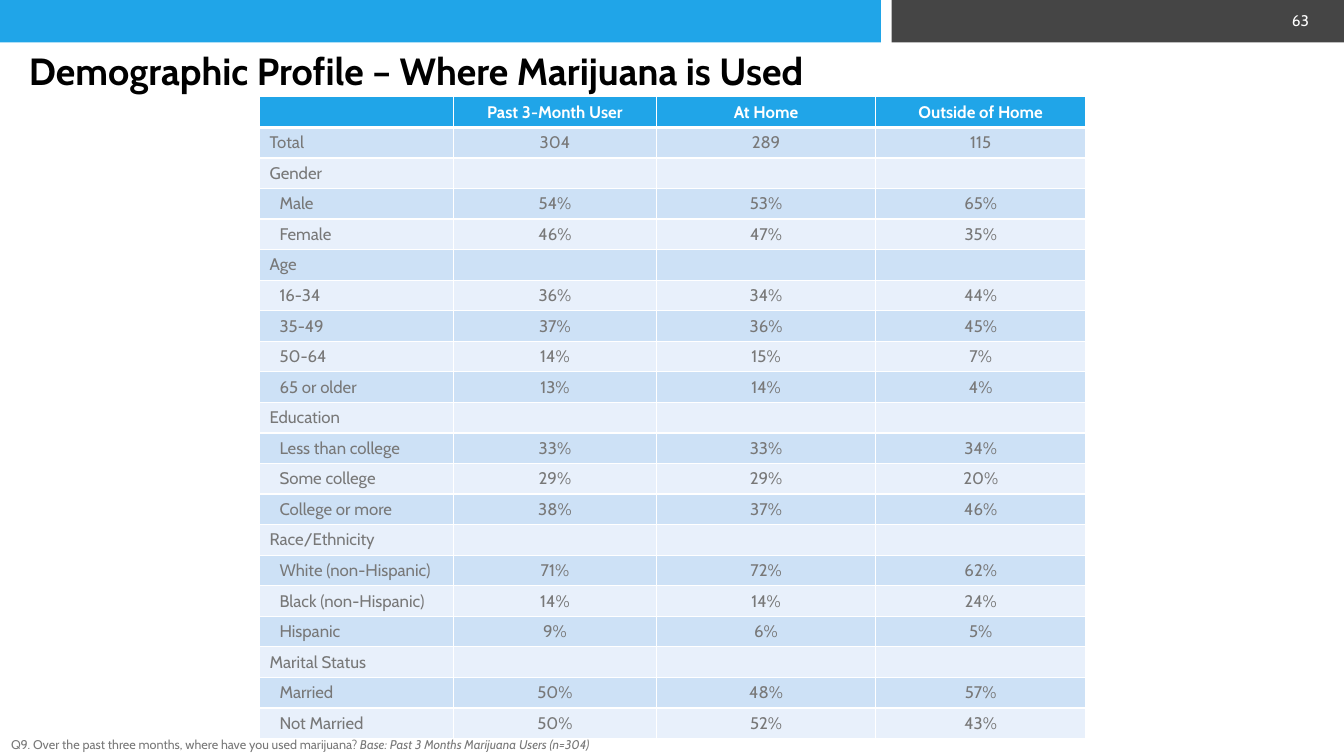
from lxml import etree
from pptx import Presentation
from pptx import util as u
from pptx.dml.color import RGBColor
from pptx.enum import shapes, text
from pptx.oxml import ns

TITLE = "Demographic Profile – Where Marijuana is Used"
PAGE_NUMBER = "63"
QUESTION = "Q9. Over the past three months, where have you used marijuana? "
BASE = "Base: Past 3 Months Marijuana Users (n=304)"
HEADERS = ["", "Past 3-Month User", "At Home", "Outside of Home"]
TOTALS = ["Total", "304", "289", "115"]
GROUPS = {
    "Gender": [("Male", 54, 53, 65), ("Female", 46, 47, 35)],
    "Age": [
        ("16-34", 36, 34, 44),
        ("35-49", 37, 36, 45),
        ("50-64", 14, 15, 7),
        ("65 or older", 13, 14, 4),
    ],
    "Education": [
        ("Less than college", 33, 33, 34),
        ("Some college", 29, 29, 20),
        ("College or more", 38, 37, 46),
    ],
    "Race/Ethnicity": [
        ("White (non-Hispanic)", 71, 72, 62),
        ("Black (non-Hispanic)", 14, 14, 24),
        ("Hispanic", 9, 6, 5),
    ],
    "Marital Status": [("Married", 50, 48, 57), ("Not Married", 50, 52, 43)],
}

THEME = {
    "font": "Cabin",
    "blue": "20A5E8", "charcoal": "454545", "white": "FFFFFF",
    "black": "000000", "gray": "787878",
    "bands": ("CDE1F6", "E8F0FB"),
    "title": 27, "table": 12, "page": 11, "note": 9,
}
BANNERS = [(0, 22.2, "blue"), (22.47, 11.4, "charcoal")]
BANNER_HEIGHT = 1.07
TABLE_LEFT, TABLE_TOP = 6.54, 2.44
COLUMN_WIDTHS = [4.88, 5.13, 5.51, 5.31]
ROW_HEIGHT = 0.77
INDENT = 0.25


def color(value):
    return RGBColor.from_string(THEME.get(value, value))


def style(paragraph, size, ink, bold=False, align=text.PP_ALIGN.LEFT):
    paragraph.alignment = align
    font = paragraph.font
    font.name, font.size, font.bold = THEME["font"], u.Pt(THEME[size]), bold
    font.color.rgb = color(ink)


def add_text(slide, box, runs, anchor, *look, **options):
    frame = slide.shapes.add_textbox(*map(u.Cm, box)).text_frame
    frame.word_wrap = True
    frame.vertical_anchor = anchor
    paragraph = frame.paragraphs[0]
    for words, italic in runs:
        run = paragraph.add_run()
        run.text = words
        if italic:
            run.font.italic = True
    style(paragraph, *look, **options)


def add_borders(cell, widths):
    properties = cell._tc.get_or_add_tcPr()
    for side, width in widths.items():
        line = etree.SubElement(properties, ns.qn(f"a:ln{side}"), w=str(u.Pt(width)))
        fill = etree.SubElement(line, ns.qn("a:solidFill"))
        etree.SubElement(fill, ns.qn("a:srgbClr"), val=THEME["white"])


def table_rows():
    yield HEADERS, False
    yield TOTALS, False
    for group, members in GROUPS.items():
        yield [group, "", "", ""], False
        for name, *shares in members:
            yield [name] + [f"{share}%" for share in shares], True


def add_profile_table(slide):
    rows = list(table_rows())
    table = slide.shapes.add_table(
        len(rows), len(HEADERS), u.Cm(TABLE_LEFT), u.Cm(TABLE_TOP),
        u.Cm(sum(COLUMN_WIDTHS)), u.Cm(ROW_HEIGHT * len(rows)),
    ).table
    table.horz_banding = False
    for column, width in zip(table.columns, COLUMN_WIDTHS):
        column.width = u.Cm(width)
    for r, (values, indented) in enumerate(rows):
        table.rows[r].height = u.Cm(ROW_HEIGHT)
        header = r == 0
        for c, value in enumerate(values):
            cell = table.cell(r, c)
            add_borders(cell, {"L": 1, "R": 1, "T": 3 if r == 1 else 1, "B": 3 if header else 1})
            cell.fill.solid()
            cell.fill.fore_color.rgb = color("blue" if header else THEME["bands"][(r - 1) % 2])
            cell.margin_top = cell.margin_bottom = 0
            cell.vertical_anchor = text.MSO_ANCHOR.MIDDLE
            cell.text = value
            paragraph = cell.text_frame.paragraphs[0]
            style(paragraph, "table", "white" if header else "gray", header,
                  text.PP_ALIGN.CENTER if c else text.PP_ALIGN.LEFT)
            if indented and c == 0:
                paragraph._p.get_or_add_pPr().set("marL", str(u.Cm(INDENT)))


def main():
    presentation = Presentation()
    presentation.slide_width, presentation.slide_height = u.Cm(33.87), u.Cm(19.05)
    slide = presentation.slides.add_slide(presentation.slide_layouts[6])
    for left, width, fill in BANNERS:
        banner = slide.shapes.add_shape(
            shapes.MSO_SHAPE.RECTANGLE, u.Cm(left), 0, u.Cm(width), u.Cm(BANNER_HEIGHT))
        banner.shadow.inherit = False
        banner.fill.solid()
        banner.fill.fore_color.rgb = color(fill)
        banner.line.fill.background()
    middle, top = text.MSO_ANCHOR.MIDDLE, text.MSO_ANCHOR.TOP
    add_text(slide, (0.48, 0.94, 32.16, 1.65), [(TITLE, False)], middle, "title", "black", bold=True)
    add_text(slide, (31.72, 0.1, 1.52, 0.84), [(PAGE_NUMBER, False)], middle, "page", "white",
             align=text.PP_ALIGN.RIGHT)
    add_profile_table(slide)
    add_text(slide, (0.03, 18.44, 20.73, 0.64), [(QUESTION, False), (BASE, True)], top, "note", "gray")
    presentation.save("out.pptx")


if __name__ == "__main__":
    main()
